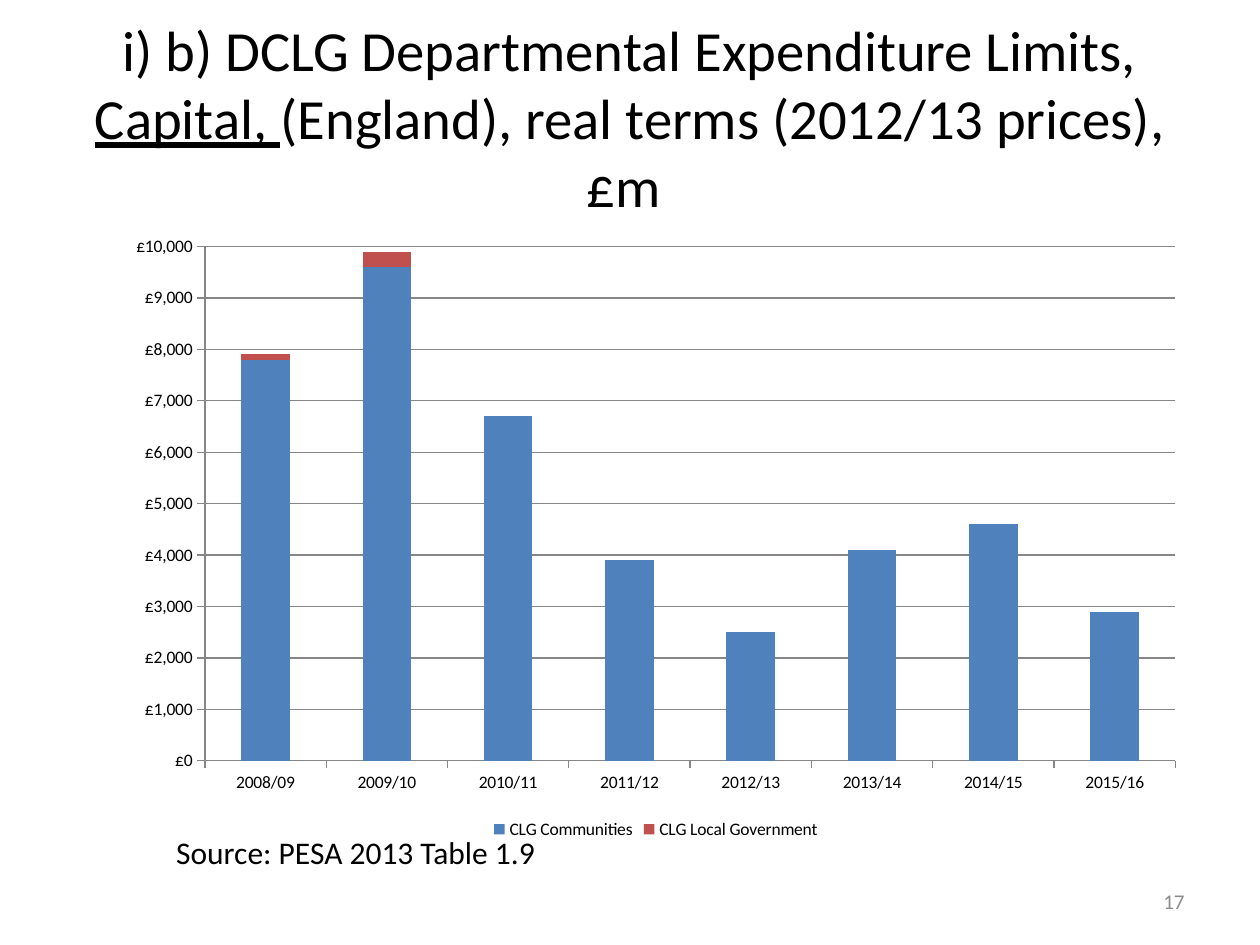
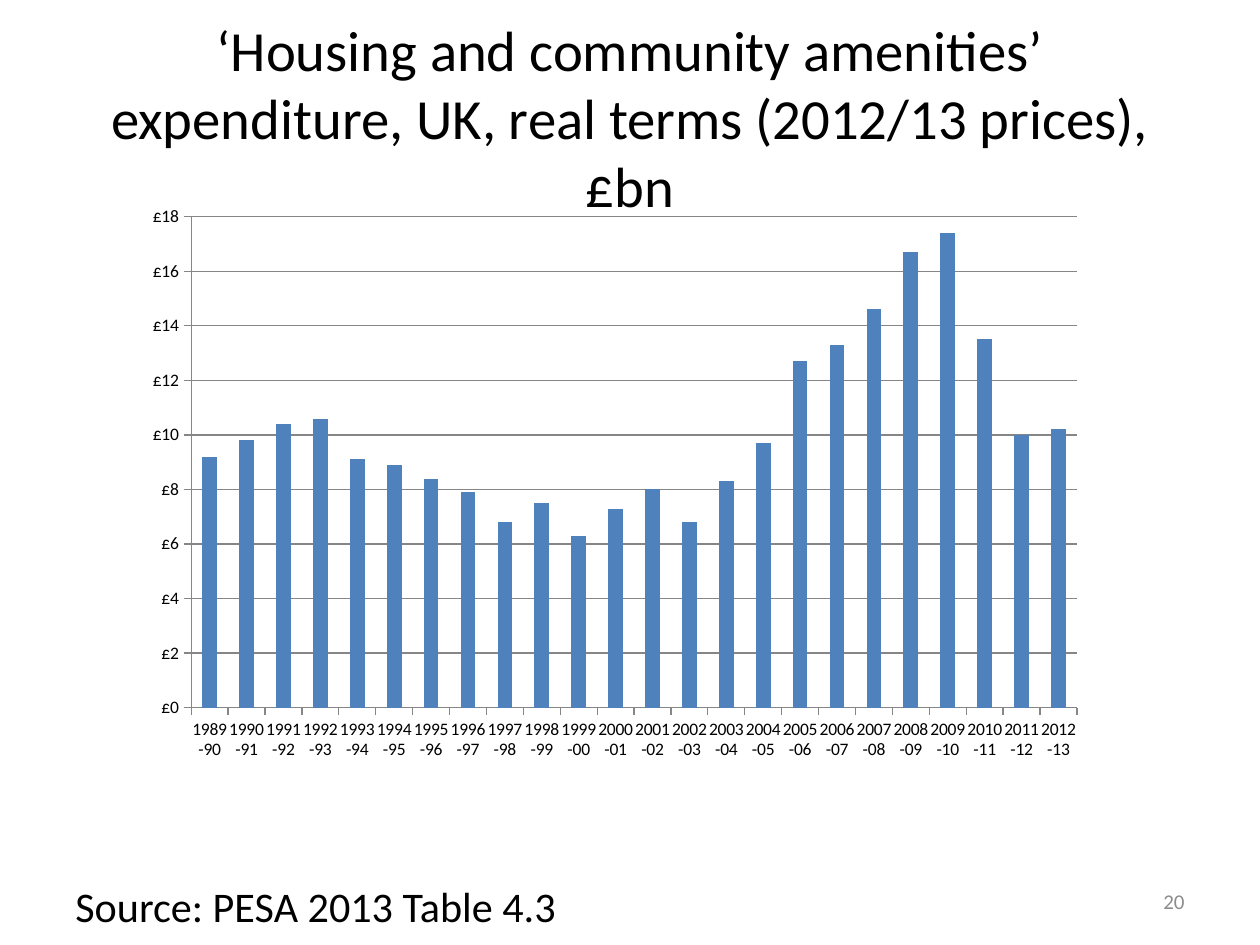
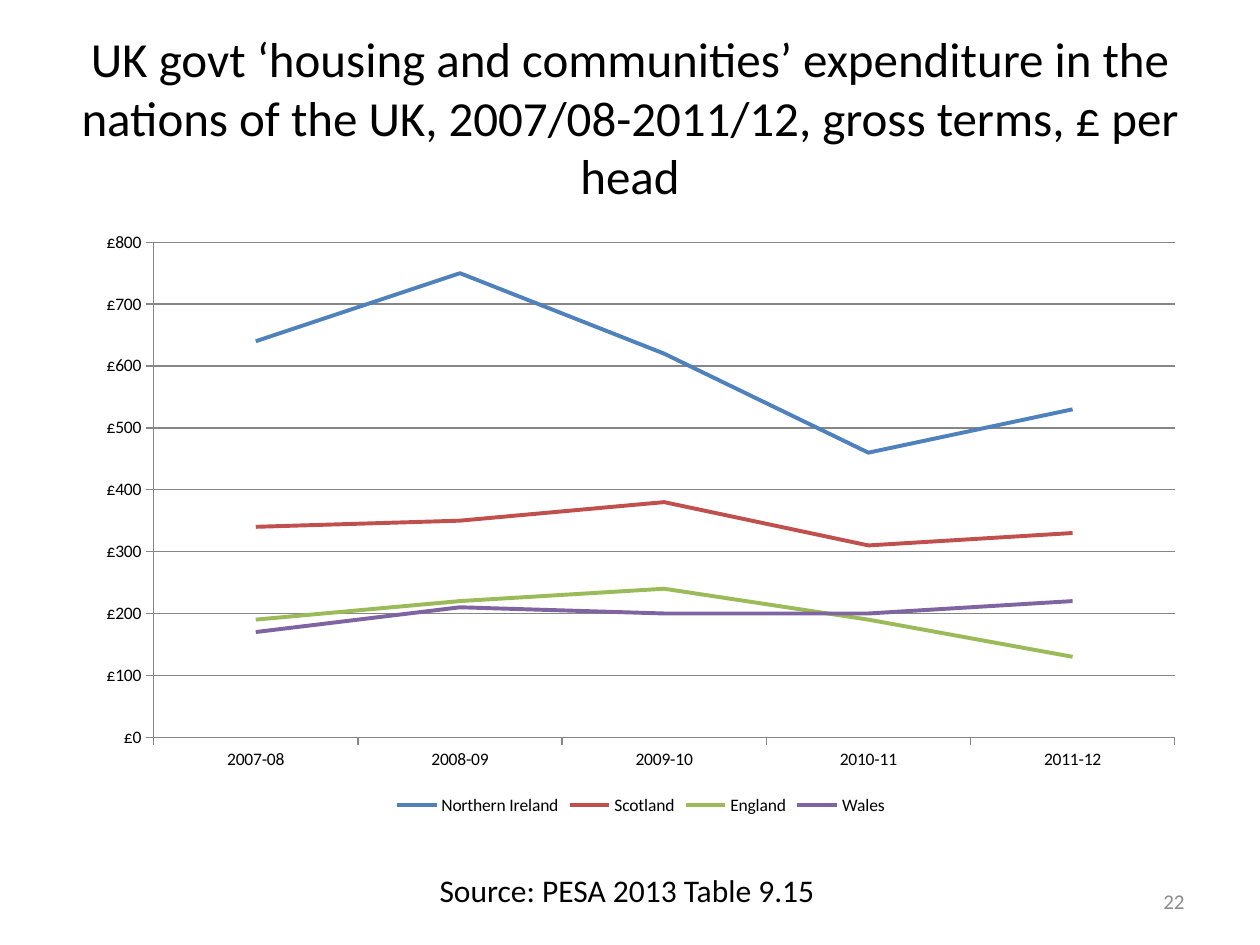
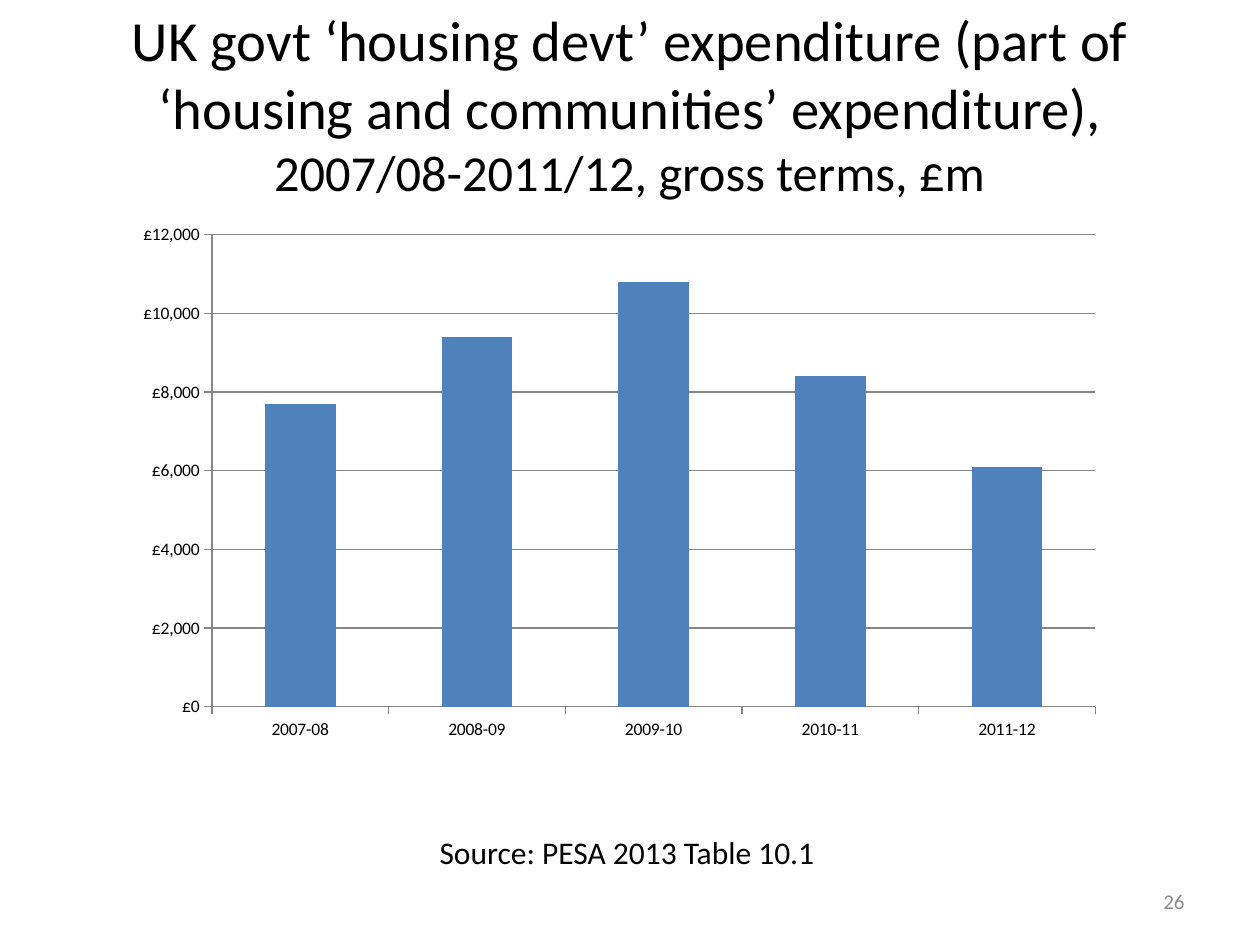
from pptx import Presentation
from pptx.chart.data import CategoryChartData
from pptx.dml.color import RGBColor
from pptx.enum.chart import XL_CHART_TYPE, XL_LEGEND_POSITION, XL_TICK_MARK
from pptx.enum.text import MSO_ANCHOR, MSO_AUTO_SIZE, PP_ALIGN
from pptx.util import Inches, Pt

STACKED = XL_CHART_TYPE.COLUMN_STACKED
CLUSTERED = XL_CHART_TYPE.COLUMN_CLUSTERED
LINE = XL_CHART_TYPE.LINE
LEGEND_BOTTOM = XL_LEGEND_POSITION.BOTTOM
TICK_OUT = XL_TICK_MARK.OUTSIDE
LEFT, CENTER, RIGHT = PP_ALIGN.LEFT, PP_ALIGN.CENTER, PP_ALIGN.RIGHT

FONT = "Calibri"
COLORS = {
    "text": "000000",
    "number": "8C8C8C",
    "grid": "868686",
    "series": ["4F81BD", "C0504D", "9BBB59", "8064A2"],
}

prs = Presentation()
prs.slide_width, prs.slide_height = Inches(10), Inches(7.5)
CELL = prs.slide_width // 100  # the slide is a grid of 100 columns by 75 rows


def grid(*cells):
    return [round(n * CELL) for n in cells]


def write(shape, runs, align, color):
    """Fill a shape with one paragraph of (text, size, underlined) runs."""
    frame = shape.text_frame
    frame.word_wrap = True
    frame.auto_size = MSO_AUTO_SIZE.NONE
    frame.vertical_anchor = MSO_ANCHOR.MIDDLE
    paragraph = frame.paragraphs[0]
    paragraph.alignment = align
    for text, size, underlined in runs:
        run = paragraph.add_run()
        run.text = text
        run.font.name = FONT
        run.font.size = Pt(size)
        run.font.color.rgb = RGBColor.from_string(color)
        if underlined:
            run.font.underline = True


five_years = [f"{year}-{(year + 1) % 100:02}" for year in range(2007, 2012)]

pages = [
    {
        "number": 17,
        "title": [("i) b) DCLG Departmental Expenditure Limits, ", 32.4, False),
                  ("Capital, ", 32.4, True),
                  ("(England), real terms (2012/13 prices), £m ", 32.4, False)],
        "source": ("Source: PESA 2013 Table 1.9", 18),
        "source_at": (13, 65.6, 49.6, 4),
        "kind": STACKED,
        "chart_at": (9.1, 17.8, 85.9, 49.2),
        "top": 10000, "step": 1000,
        "years": [f"{year}/{(year + 1) % 100:02}" for year in range(2008, 2016)],
        "spending": {
            "CLG Communities": [7800, 9600, 6700, 3900, 2500, 4100, 4600, 2900],
            "CLG Local Government": [100, 300, -100, 0, 0, 0, 0, 0],
        },
    },
    {
        "number": 20,
        "title": [("‘Housing and community amenities’ expenditure, UK, "
                   "real terms (2012/13 prices), £bn", 32.4, False)],
        "source": ("Source: PESA 2013 Table 4.3", 24.1),
        "source_at": (5, 69.4, 60, 5),
        "kind": CLUSTERED,
        "chart_at": (10.6, 15.5, 76.4, 45.7),
        "top": 18, "step": 2,
        "years": [f"{year}-{(year + 1) % 100:02}" for year in range(1989, 2013)],
        "spending": {
            "Series 1": [9.2, 9.8, 10.4, 10.6, 9.1, 8.9, 8.4, 7.9,
                         6.8, 7.5, 6.3, 7.3, 8, 6.8, 8.3, 9.7,
                         12.7, 13.3, 14.6, 16.7, 17.4, 13.5, 10, 10.2],
        },
    },
    {
        "number": 22,
        "title": [("UK govt ‘housing and communities’ expenditure in the nations "
                   "of the UK, 2007/08-2011/12, gross terms, £ per head", 28, False)],
        "source": ("Source: PESA 2013 Table 9.15", 18),
        "source_at": (33.9, 68.6, 34, 4),
        "kind": LINE,
        "chart_at": (6.7, 17.5, 88.3, 47.6),
        "top": 800, "step": 100,
        "years": five_years,
        "spending": {
            "Northern Ireland": [640, 750, 620, 460, 530],
            "Scotland": [340, 350, 380, 310, 330],
            "England": [190, 220, 240, 190, 130],
            "Wales": [170, 210, 200, 200, 220],
        },
    },
    {
        "number": 26,
        "title": [("UK govt ‘housing devt’ expenditure (part of ‘housing and "
                   "communities’ expenditure), ", 32.4, False),
                  ("2007/08-2011/12, gross terms, £m", 28.8, False)],
        "title_rows": 14.8,
        "title_lift": 4.9,
        "source": ("Source: PESA 2013 Table 10.1", 18),
        "source_at": (33.9, 65.6, 34, 4),
        "kind": CLUSTERED,
        "chart_at": (9.8, 17, 78.7, 42.5),
        "top": 12000, "step": 2000,
        "years": five_years,
        "spending": {"Series 1": [7700, 9400, 10800, 8400, 6100]},
    },
]

for page in pages:
    slide = prs.slides.add_slide(prs.slide_layouts[5])

    # Title, source and slide number
    title = slide.shapes.title
    title.left, title.top, title.width, title.height = grid(
        5, 3, 90, page.get("title_rows", 12.5))
    write(title, page["title"], CENTER, COLORS["text"])
    if "title_lift" in page:
        title.text_frame.margin_bottom = grid(page["title_lift"])[0]

    source = slide.shapes.add_textbox(*grid(*page["source_at"]))
    write(source, [(*page["source"], False)], LEFT, COLORS["text"])
    number = slide.shapes.add_textbox(*grid(71.7, 69.5, 23.3, 4))
    write(number, [(str(page["number"]), 12, False)], RIGHT, COLORS["number"])

    # Spending chart
    data = CategoryChartData(number_format='"£"#,##0')
    data.categories = page["years"]
    for name, values in page["spending"].items():
        data.add_series(name, values)
    chart = slide.shapes.add_chart(page["kind"], *grid(*page["chart_at"]), data).chart
    chart.has_title = False
    chart.font.name = FONT
    chart.font.size = Pt(10)
    chart.font.color.rgb = RGBColor.from_string(COLORS["text"])

    chart.has_legend = len(page["spending"]) > 1
    if chart.has_legend:
        chart.legend.position = LEGEND_BOTTOM
        chart.legend.include_in_layout = False

    amounts = chart.value_axis
    amounts.minimum_scale, amounts.maximum_scale = 0, page["top"]
    amounts.major_unit = page["step"]
    amounts.has_major_gridlines = True
    amounts.tick_labels.number_format = '"£"#,##0'
    amounts.tick_labels.number_format_is_linked = False
    for axis in (amounts, chart.category_axis):
        axis.major_tick_mark = TICK_OUT
    for ruled in (amounts, chart.category_axis, amounts.major_gridlines):
        ruled.format.line.color.rgb = RGBColor.from_string(COLORS["grid"])
        ruled.format.line.width = Pt(0.75)

    plot = chart.plots[0]
    plot.vary_by_categories = False
    if page["kind"] != LINE:
        plot.gap_width = 150
        plot.overlap = 100 if page["kind"] == STACKED else 0
    for series, hex_color in zip(plot.series, COLORS["series"]):
        color = RGBColor.from_string(hex_color)
        if page["kind"] == LINE:
            series.smooth = False
            series.format.line.color.rgb = color
            series.format.line.width = Pt(2.25)
        else:
            series.invert_if_negative = False
            series.format.fill.solid()
            series.format.fill.fore_color.rgb = color

prs.save("out.pptx")
